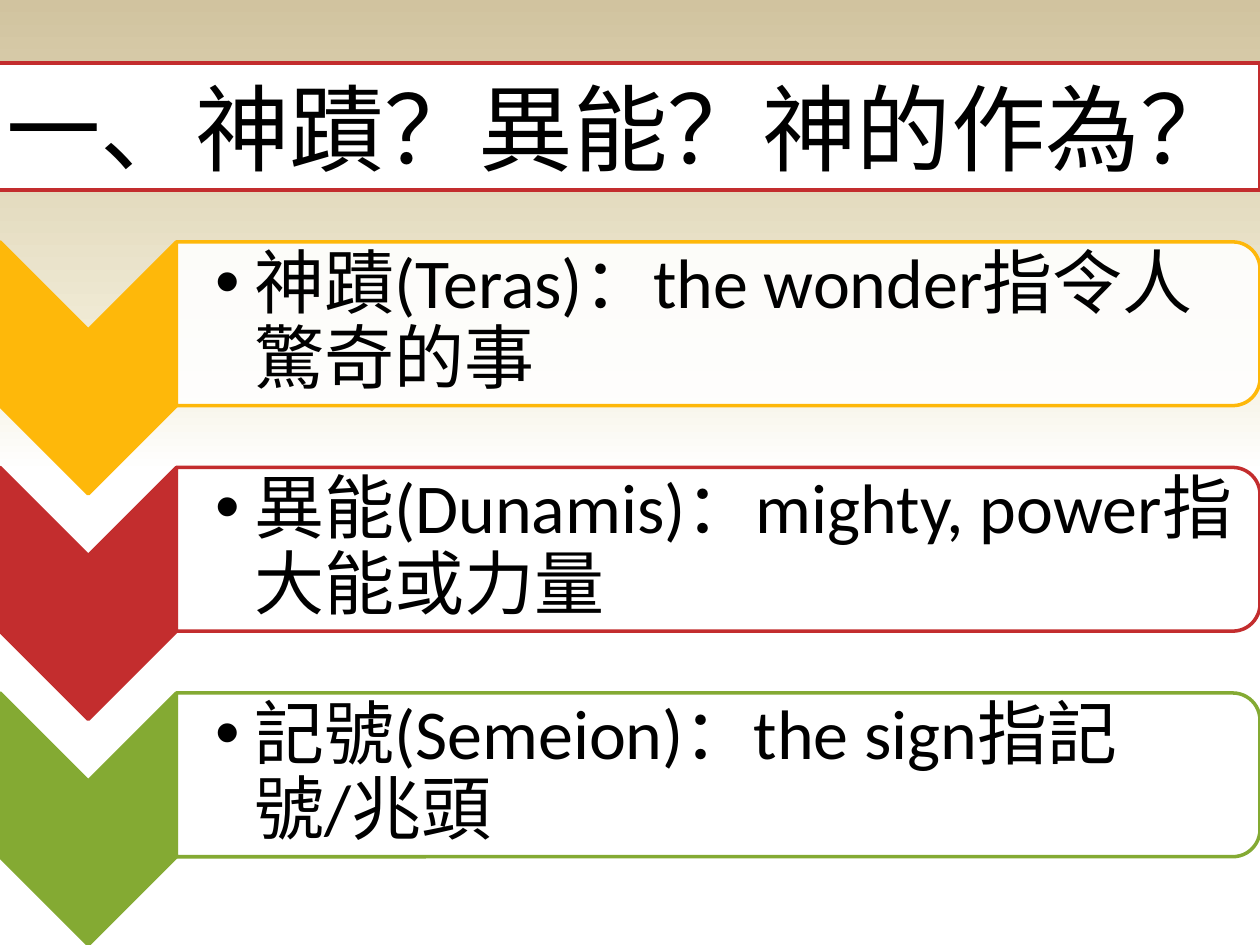
import pptx
import pptx.dml.color
import pptx.enum.shapes
import pptx.enum.text
import pptx.oxml
import pptx.oxml.ns
import pptx.util
from pptx.util import Inches

SHAPES = pptx.enum.shapes.MSO_SHAPE
FONT = "Calibri"
ROW_TOP = 1.92
ROW_PITCH = 1.79
ROWS = [
    ("神蹟(Teras)：the wonder指令人驚奇的事", "FEB80A"),
    ("異能(Dunamis)：mighty, power指大能或力量", "C32D2E"),
    ("記號(Semeion)：the sign指記號/兆頭", "84AA33"),
]


def color(hex_value):
    return pptx.dml.color.RGBColor.from_string(hex_value)


def xml(text):
    namespace = pptx.oxml.ns.nsdecls("a")
    return pptx.oxml.parse_xml(text.replace("NS", namespace, 1))


def paint(shape, fill, line):
    shape.fill.solid()
    shape.fill.fore_color.rgb = color(fill)
    shape.line.color.rgb = color(line)
    shape.line.width = pptx.util.Pt(2)


def write(frame, text, size):
    frame.text = text
    frame.vertical_anchor = pptx.enum.text.MSO_ANCHOR.MIDDLE
    para = frame.paragraphs[0]
    para.alignment = pptx.enum.text.PP_ALIGN.LEFT
    font = para.runs[0].font
    font.name = FONT
    font.size = pptx.util.Pt(size)
    font.color.rgb = color("000000")
    return para


def set_background(slide):
    """Fade from tan at the top to white at mid-height."""
    fill = slide.background.fill
    fill.gradient()
    gradient = slide.background._cSld.bg.bgPr.find(pptx.oxml.ns.qn("a:gradFill"))
    for child in list(gradient):
        gradient.remove(child)
    stops = "".join(
        f'<a:gs pos="{position * 1000}"><a:srgbClr val="{value}"/></a:gs>'
        for position, value in [(50, "FFFFFF"), (65, "F0EBD5"), (100, "D1C39F")]
    )
    gradient.append(xml(f"<a:gsLst NS>{stops}</a:gsLst>"))
    gradient.append(xml('<a:lin NS ang="16200000" scaled="0"/>'))


def add_title(slide, text):
    title = slide.shapes.title
    title.left, title.top = Inches(-0.05), Inches(0.5)
    title.width, title.height = Inches(10.05), Inches(1.01)
    paint(title, "FFFFFF", "C32D2E")
    frame = title.text_frame
    write(frame, text, 54)
    frame.word_wrap = False
    frame.auto_size = pptx.enum.text.MSO_AUTO_SIZE.SHAPE_TO_FIT_TEXT


def add_turned_shape(slide, kind, left, top, width, height, fill, line):
    """Add a shape turned by 90 degrees; the box given is the one it shows in."""
    shift = (width - height) / 2
    shape = slide.shapes.add_shape(
        kind, Inches(left + shift), Inches(top - shift), Inches(height), Inches(width)
    )
    shape.rotation = 90
    shape.shadow.inherit = False
    paint(shape, fill, line)
    return shape


def add_bullet_text(slide, text, top):
    box = slide.shapes.add_textbox(Inches(1.4), Inches(top), Inches(8.54), Inches(1.17))
    frame = box.text_frame
    frame.word_wrap = True
    frame.margin_left = Inches(0.31)
    frame.margin_top = frame.margin_right = frame.margin_bottom = Inches(0.03)
    para = write(frame, text, 40)
    para.line_spacing = 0.9
    properties = para._p.get_or_add_pPr()
    properties.set("marL", str(Inches(0.31)))
    properties.set("indent", str(Inches(-0.31)))
    properties.append(xml('<a:buFont NS typeface="Arial"/>'))
    properties.append(xml('<a:buChar NS char="•"/>'))


def add_row(slide, text, accent, top):
    add_turned_shape(slide, SHAPES.CHEVRON, 0, top, 1.4, 2, accent, accent)
    panel = add_turned_shape(
        slide, SHAPES.ROUND_2_SAME_RECTANGLE, 1.4, top, 8.6, 1.3, "FFFFFF", accent
    )
    fill_color = panel.fill._xPr.find(pptx.oxml.ns.qn("a:solidFill"))[0]
    fill_color.append(xml('<a:alpha NS val="90000"/>'))
    add_bullet_text(slide, text, top + 0.06)


def main():
    deck = pptx.Presentation()
    deck.slide_width, deck.slide_height = Inches(10), Inches(7.5)
    slide = deck.slides.add_slide(deck.slide_layouts.get_by_name("Title Only"))
    set_background(slide)
    add_title(slide, "一、神蹟？異能？神的作為？")
    for index, (text, accent) in enumerate(ROWS):
        add_row(slide, text, accent, ROW_TOP + index * ROW_PITCH)
    deck.save("out.pptx")


if __name__ == "__main__":
    main()
